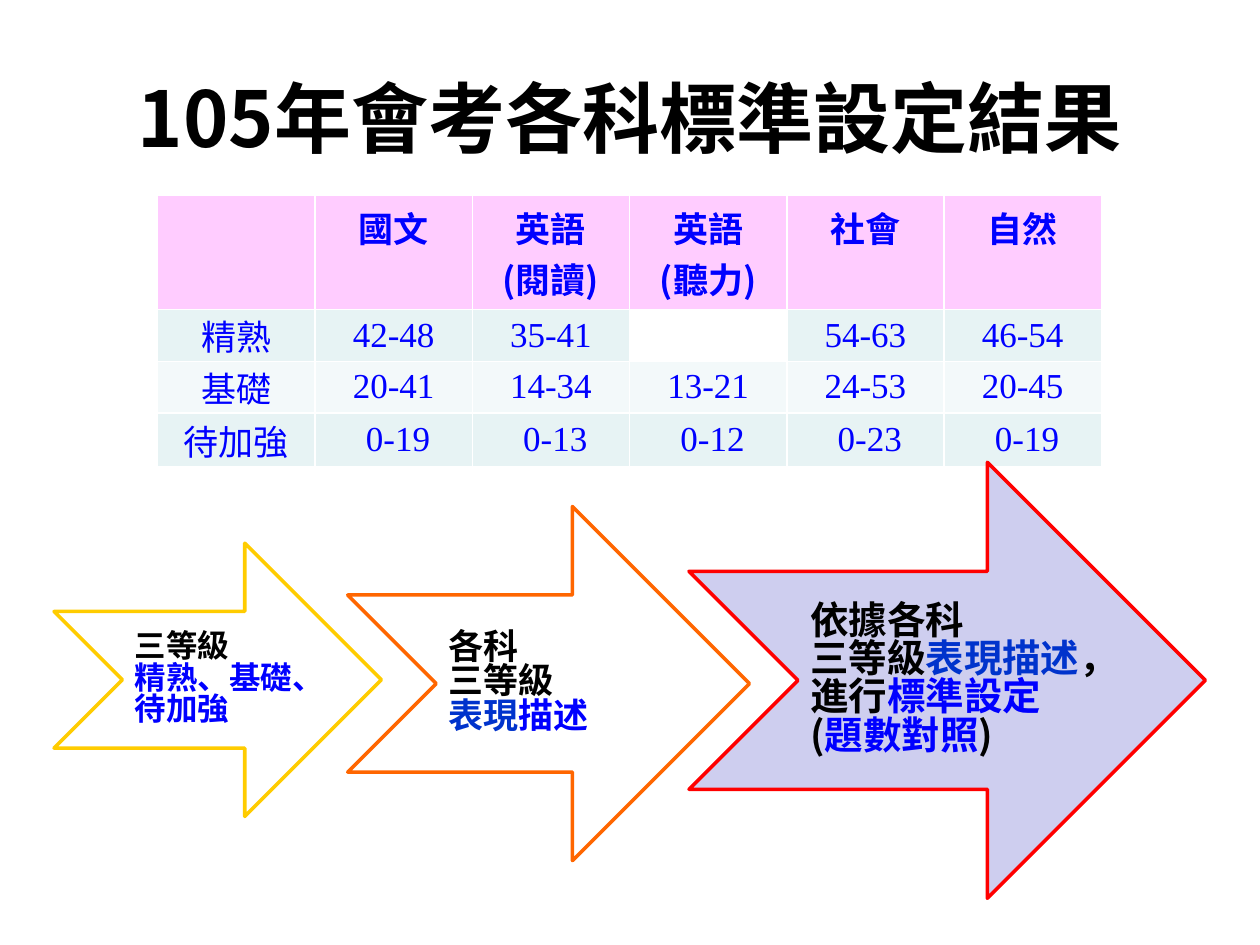
from lxml.etree import SubElement
from pptx import Presentation
from pptx.dml.color import RGBColor
from pptx.enum.shapes import MSO_SHAPE as Preset
from pptx.enum.text import MSO_ANCHOR as Anchor, PP_ALIGN as Align
from pptx.oxml.ns import qn
from pptx.util import Cm, Pt

CJK = "Noto Sans CJK SC"
LATIN = "Times New Roman"
COLORS = {
    "black": "000000", "blue": "0000FF", "navy": "0033CC", "white": "FFFFFF",
    "pink": "FFCCFF", "mint": "E7F3F4", "pale": "F3F9FA", "lilac": "CECEEF",
    "yellow": "FFCC00", "orange": "FF6600", "red": "FF0000",
}
SCORES = [
    ["", "國文", "英語\n(閱讀)", "英語\n(聽力)", "社會", "自然"],
    ["精熟", "42-48", "35-41", "", "54-63", "46-54"],
    ["基礎", "20-41", "14-34", "13-21", "24-53", "20-45"],
    ["待加強", "0-19", "0-13", "0-12", "0-23", "0-19"],
]
ROW_HEIGHTS = [1.96, 1.04, 1.04, 1.09]
ROW_FILLS = ["pink", "mint", "pale", "mint"]
STEPS = [
    ((1.09, 10.95, 6.6, 5.51), "white", "yellow", 18,
     [[("三等級", "black")], [("精熟、基礎、待加強", "blue")]]),
    ((7.01, 10.21, 8.1, 7.14), "white", "orange", 20,
     [[("各科", "black")], [("三等級", "black")],
      [("表現", "navy"), ("描述", "blue")]]),
    ((13.89, 9.32, 10.41, 8.79), "lilac", "red", 22,
     [[("依據各科", "black")],
      [("三等級", "black"), ("表現描述", "navy"), ("，進行", "black"),
       ("標準設定", "blue"), ("(", "black"), ("題數對照", "blue"),
       (")", "black")]]),
]


def rgb(name):
    """Return the named colour."""
    return RGBColor.from_string(COLORS[name])


def add_run(paragraph, text, size, color, bold=True, face=CJK):
    """Add one formatted run, with the face set for East Asian text too."""
    run = paragraph.add_run()
    run.text = text
    font = run.font
    font.size, font.bold, font.name = Pt(size), bold, face
    font.color.rgb = rgb(color)
    SubElement(run._r.get_or_add_rPr(), qn("a:ea"), typeface=CJK)


def set_title(slide, text):
    """Place and fill the title placeholder."""
    title = slide.shapes.title
    title.left, title.top = Cm(1.27), Cm(0.76)
    title.width, title.height = Cm(22.86), Cm(3.18)
    title.text_frame.vertical_anchor = Anchor.MIDDLE
    heading = title.text_frame.paragraphs[0]
    heading.alignment = Align.CENTER
    add_run(heading, text, 44, "black")


def fill_cell(cell, text, row, column):
    """Format one score cell according to its row and column."""
    is_header = row == 0
    is_blank_score = not is_header and not text
    cell.fill.solid()
    cell.fill.fore_color.rgb = rgb("white" if is_blank_score else ROW_FILLS[row])
    if not is_header:
        is_shifted = row == len(SCORES) - 1 and column > 0
        cell.vertical_anchor = Anchor.MIDDLE
        cell.margin_left = Cm(0.23 if is_shifted else 0.05)
        cell.margin_right = Cm(0.05)
        cell.margin_top = cell.margin_bottom = Cm(0)
    paragraph = cell.text_frame.paragraphs[0]
    paragraph.alignment = Align.CENTER
    face = CJK if is_header or column == 0 else LATIN
    for index, line in enumerate(text.split("\n") if text else []):
        if index:
            paragraph.add_line_break()
        add_run(paragraph, line, 20, "blue", is_header, face)


def add_scores(slide):
    """Add the table of score ranges by subject and level."""
    column_count = len(SCORES[0])
    scores = slide.shapes.add_table(
        len(SCORES), column_count, Cm(3.18), Cm(3.94),
        Cm(19.02), Cm(sum(ROW_HEIGHTS))).table
    for column in scores.columns:
        column.width = Cm(19.02 / column_count)
    for row, texts in enumerate(SCORES):
        scores.rows[row].height = Cm(ROW_HEIGHTS[row])
        for column, text in enumerate(texts):
            fill_cell(scores.cell(row, column), text, row, column)


def add_step(slide, box, fill, outline, size, lines):
    """Add one notched arrow with its lines of coloured runs."""
    step = slide.shapes.add_shape(Preset.NOTCHED_RIGHT_ARROW, *map(Cm, box))
    step.shadow.inherit = False
    step.fill.solid()
    step.fill.fore_color.rgb = rgb(fill)
    step.line.color.rgb = rgb(outline)
    step.line.width = Pt(2)
    frame = step.text_frame
    frame.word_wrap = True
    frame.vertical_anchor = Anchor.MIDDLE
    for index, runs in enumerate(lines):
        paragraph = frame.add_paragraph() if index else frame.paragraphs[0]
        paragraph.alignment = Align.LEFT
        paragraph.line_spacing = 0.83
        for text, color in runs:
            add_run(paragraph, text, size, color)


def main():
    """Build and save the slide."""
    deck = Presentation()
    deck.slide_width, deck.slide_height = Cm(25.4), Cm(19.05)
    slide = deck.slides.add_slide(deck.slide_layouts[5])
    set_title(slide, "105年會考各科標準設定結果")
    add_scores(slide)
    for step in STEPS:
        add_step(slide, *step)
    deck.save("out.pptx")


if __name__ == "__main__":
    main()
